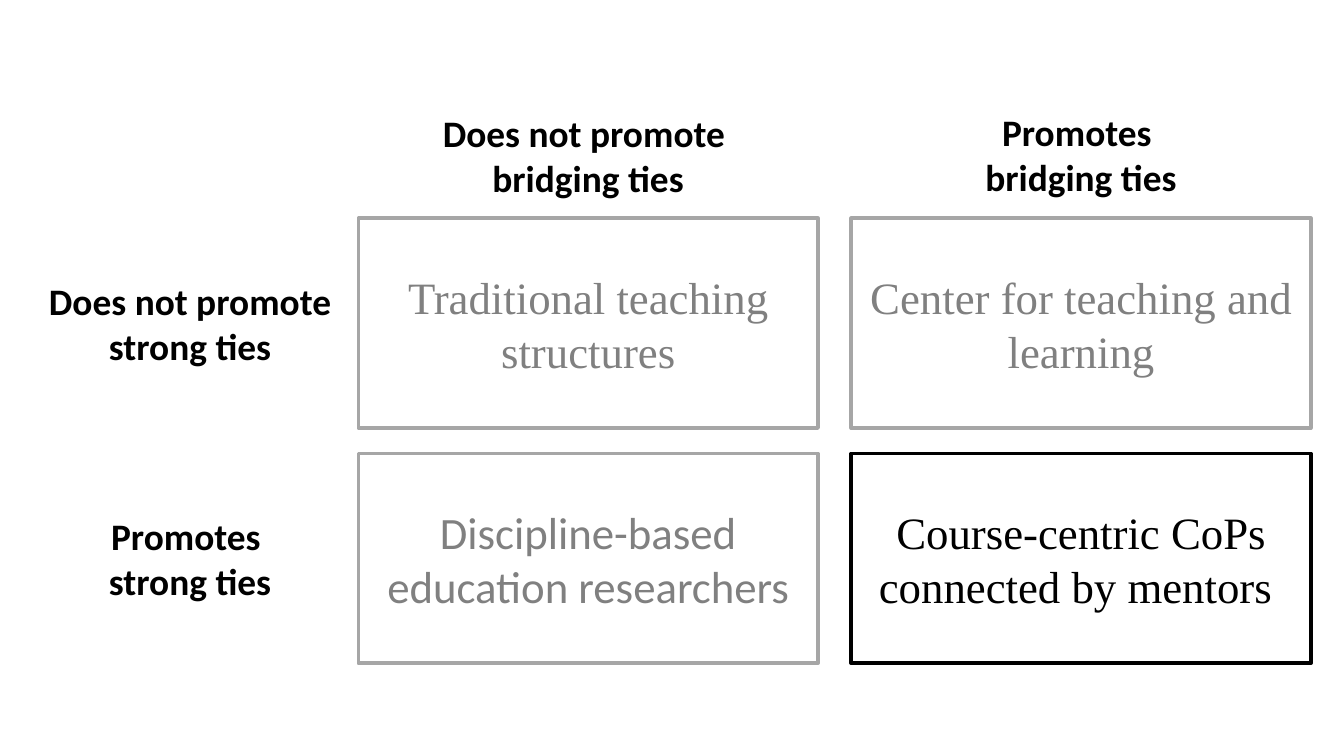
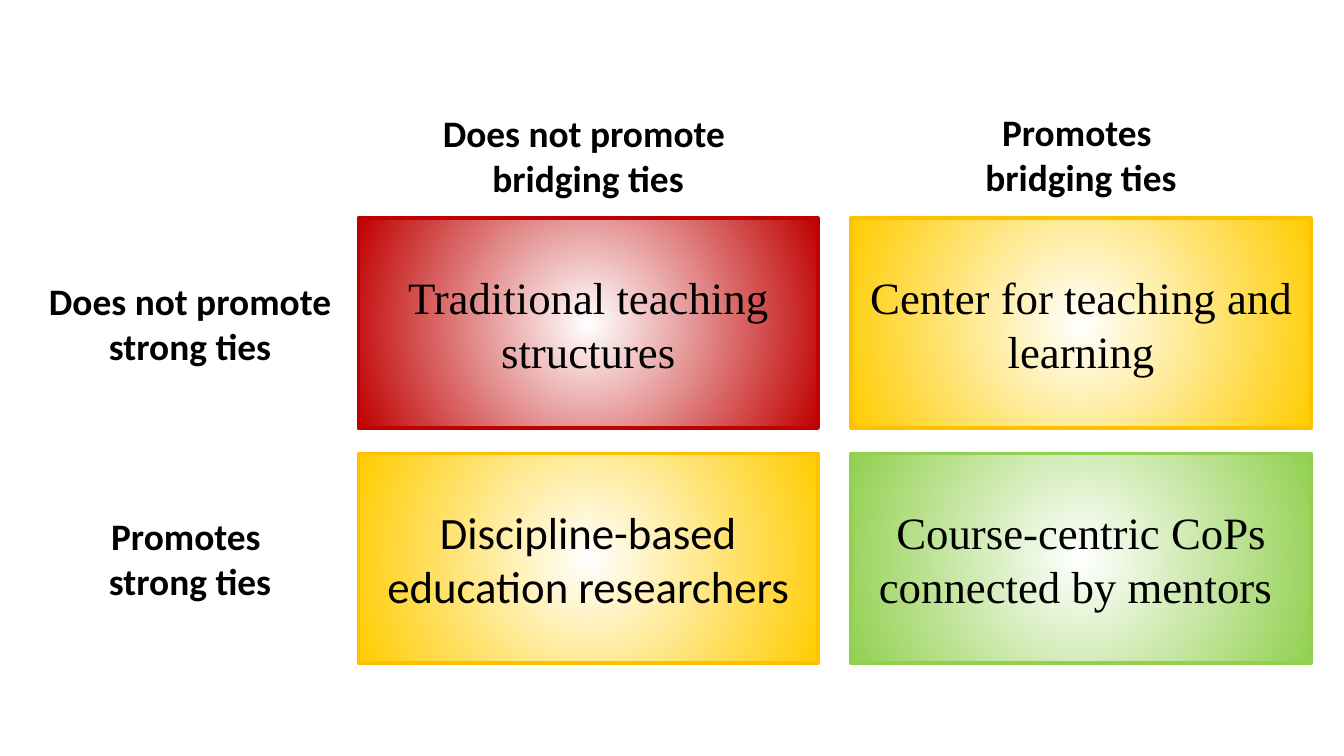
from dataclasses import dataclass

from lxml import etree
from pptx import Presentation
from pptx import util as u
from pptx.dml.color import RGBColor
from pptx.enum import shapes, text
from pptx.oxml.ns import qn


@dataclass(frozen=True)
class Theme:
    white: str = "FFFFFF"
    black: str = "000000"
    grey_text: str = "808080"
    grey_line: str = "A6A6A6"
    red: str = "C00000"
    yellow: str = "FFCC00"
    amber: str = "FFC000"
    green: str = "92D050"
    sans: str = "Calibri"
    serif: str = "Times New Roman"
    label_size: int = 20
    cell_size: int = 24
    line_width: int = 2


T = Theme()

SLIDE_W = 10
SLIDE_H = SLIDE_W * 9 / 16
COL_X = (8 / 3, 19 / 3)
ROW_Y = (13 / 8, 27 / 8)
CELL_W, CELL_H = 3.42, 1.56
HEAD_Y, HEAD_H = (0.75, 0.74), 0.81
SIDE_X, SIDE_W = 0.25, 2.33

COLUMN_HEADS = (
    ("Does not promote ", "bridging ties"),
    ("Promotes ", "bridging ties"),
)
ROW_HEADS = (
    ("Does not promote strong ties",),
    ("Promotes ", "strong ties"),
)
# (row, column): (wording, font)
APPROACHES = {
    (1, 0): ("Discipline-based education researchers", T.sans),
    (0, 1): ("Center for teaching and learning", T.serif),
    (0, 0): ("Traditional teaching structures", T.serif),
    (1, 1): ("Course-centric CoPs connected by mentors ", T.serif),
}

# (row, column): (text colour, line colour, gradient edge colour or None)
MUTED = (T.grey_text, T.grey_line, None)
FOCUS_STYLE = {
    (0, 0): MUTED,
    (0, 1): MUTED,
    (1, 0): MUTED,
    (1, 1): (T.black, T.black, None),
}
RATING_STYLE = {
    (0, 0): (T.black, T.red, T.red),
    (0, 1): (T.black, T.amber, T.yellow),
    (1, 0): (T.black, T.amber, T.yellow),
    (1, 1): (T.black, T.green, T.green),
}


def rgb(value):
    return RGBColor.from_string(value)


def add_box(s, at, lines, **font):
    """Add an unpainted rectangle with one centred paragraph per line."""
    sp = s.shapes.add_shape(shapes.MSO_SHAPE.RECTANGLE, *map(u.Inches, at))
    sp.shadow.inherit = False
    tf = sp.text_frame
    tf.word_wrap = True
    tf.vertical_anchor = text.MSO_ANCHOR.MIDDLE
    color = font.pop("color")
    for i, line in enumerate(lines):
        p = tf.paragraphs[0] if i == 0 else tf.add_paragraph()
        p.alignment = text.PP_ALIGN.CENTER
        r = p.add_run()
        r.text = line
        for name, value in font.items():
            setattr(r.font, name, value)
        r.font.color.rgb = rgb(color)
    return sp


def fill_radial(sp, edge):
    """Fade from white at the centre to the edge colour."""
    sp.fill.gradient()
    for stop, color in zip(sp.fill.gradient_stops, (T.white, edge)):
        stop.color.rgb = rgb(color)
    grad = sp._element.spPr.find(qn("a:gradFill"))
    grad.remove(grad.find(qn("a:lin")))
    circle = etree.SubElement(grad, qn("a:path"), {"path": "circle"})
    etree.SubElement(circle, qn("a:fillToRect"),
                     dict.fromkeys("ltrb", "50000"))


def add_label(s, at, lines):
    sp = add_box(s, at, lines, name=T.sans, size=u.Pt(T.label_size),
                 bold=True, color=T.black)
    sp.fill.solid()
    sp.fill.fore_color.rgb = rgb(T.white)
    sp.line.fill.background()


def add_cell(s, at, wording, font, style):
    color, line, edge = style
    sp = add_box(s, at, [wording], name=font, size=u.Pt(T.cell_size),
                 color=color)
    if edge:
        fill_radial(sp, edge)
    else:
        sp.fill.background()
    sp.line.color.rgb = rgb(line)
    sp.line.width = u.Pt(T.line_width)


def add_matrix(prs, styles):
    s = prs.slides.add_slide(prs.slide_layouts[6])
    for (row, col), (wording, font) in APPROACHES.items():
        add_cell(s, (COL_X[col], ROW_Y[row], CELL_W, CELL_H),
                 wording, font, styles[row, col])
    for x, y, lines in zip(COL_X, HEAD_Y, COLUMN_HEADS):
        add_label(s, (x, y, CELL_W, HEAD_H), lines)
    for y, lines in zip(ROW_Y, ROW_HEADS):
        add_label(s, (SIDE_X, y, SIDE_W, CELL_H), lines)


def main():
    prs = Presentation()
    prs.slide_width, prs.slide_height = u.Inches(SLIDE_W), u.Inches(SLIDE_H)
    for styles in (FOCUS_STYLE, RATING_STYLE):
        add_matrix(prs, styles)
    prs.save("out.pptx")


if __name__ == "__main__":
    main()
